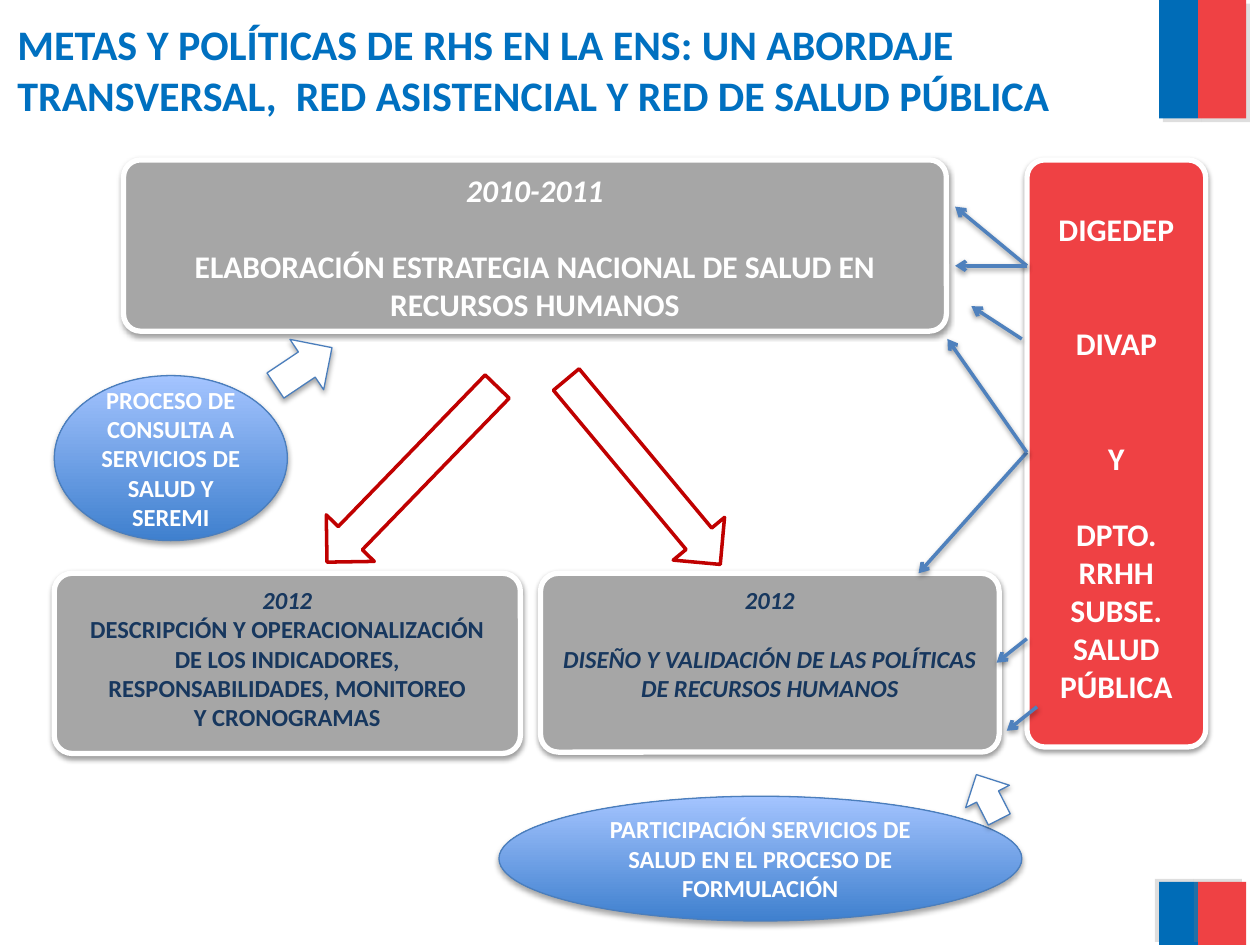
from dataclasses import dataclass

from lxml import etree
from pptx import Presentation
from pptx.dml.color import RGBColor
from pptx.enum.shapes import MSO_CONNECTOR, MSO_SHAPE
from pptx.enum.text import MSO_ANCHOR, PP_ALIGN
from pptx.oxml.ns import qn
from pptx.util import Pt

RECT = MSO_SHAPE.RECTANGLE
ROUND = MSO_SHAPE.ROUNDED_RECTANGLE
OVAL = MSO_SHAPE.OVAL
ARROW = MSO_SHAPE.RIGHT_ARROW
STRAIGHT = MSO_CONNECTOR.STRAIGHT
TOP, MIDDLE = MSO_ANCHOR.TOP, MSO_ANCHOR.MIDDLE
LEFT, CENTER = PP_ALIGN.LEFT, PP_ALIGN.CENTER


@dataclass(frozen=True)
class Theme:
    font: str = "Calibri"
    title: str = "0070C0"
    white: str = "FFFFFF"
    navy: str = "17375E"
    gray: str = "A6A6A6"
    blue: str = "006CB7"
    red: str = "EF4144"
    dark_red: str = "C00000"
    link: str = "4F81BD"
    edge: str = "4B7EBC"
    deep: str = "3F80CE"
    pale: str = "A4C4FF"
    head: int = 24
    large: int = 18
    small: int = 14
    # Shadows: colour, opacity %, blur, distance, angle
    card: tuple = ("000000", 38, 3.1, 1.6, 90)
    soft: tuple = ("000000", 35, 3.1, 1.8, 90)


T = Theme()
LINE = 1.22  # line height of the font, in ems


def rgb(color):
    return RGBColor.from_string(color)


def cast(shape, shade):
    """Give the shape its own shadow, or none."""
    props = shape.element.spPr
    effects = props.find(qn("a:effectLst"))
    if effects is None:
        effects = etree.SubElement(props, qn("a:effectLst"))
    if shade:
        color, alpha, blur, dist, angle = shade
        outer = etree.SubElement(
            effects, qn("a:outerShdw"), blurRad=str(Pt(blur)), dist=str(Pt(dist)),
            dir=str(angle * 60000), algn="ctr", rotWithShape="0")
        tint = etree.SubElement(outer, qn("a:srgbClr"), val=color)
        etree.SubElement(tint, qn("a:alpha"), val=str(alpha * 1000))


def add_form(slide, kind, box, fill, line=None, width=0, shade=None, turn=0):
    """Add a preset shape; a pair of colours as fill rises from bottom to top."""
    form = slide.shapes.add_shape(kind, *map(Pt, box))
    form.rotation = turn
    if isinstance(fill, tuple):
        form.fill.gradient()
        form.fill.gradient_angle = 90
        for stop, color in zip(form.fill.gradient_stops, fill):
            stop.color.rgb = rgb(color)
    else:
        form.fill.solid()
        form.fill.fore_color.rgb = rgb(fill)
    if line:
        form.line.color.rgb = rgb(line)
        form.line.width = Pt(width)
    else:
        form.line.fill.background()
    form.shadow.inherit = False
    cast(form, shade)
    return form


def put_text(form, parts, size=T.small, color=T.white, align=CENTER, anchor=TOP, lead=0):
    """Write parts of (text, italic, lines skipped above); lead skips lines at the top."""
    frame = form.text_frame
    frame.word_wrap = True
    frame.vertical_anchor = anchor
    step = size * LINE
    frame.margin_top = Pt(3.6 + lead * step)
    for i, (words, italic, skip) in enumerate(parts):
        para = frame.paragraphs[0] if i == 0 else frame.add_paragraph()
        para.alignment = align
        para.space_before = Pt(round(skip * step, 2))
        run = para.add_run()
        run.text = words
        font = run.font
        font.name, font.size, font.bold, font.italic = T.font, Pt(size), True, italic
        font.color.rgb = rgb(color)


def add_card(slide, box, parts, fill=T.gray, **style):
    card = add_form(slide, ROUND, box, fill, T.white, 3, T.card)
    card.adjustments[0] = 0.1
    put_text(card, parts, **style)


def add_oval(slide, box, words):
    oval = add_form(slide, OVAL, box, (T.deep, T.pale), T.edge, 0.75, T.soft)
    put_text(oval, [(words, False, 0)], anchor=MIDDLE)


def add_link(slide, start, end):
    link = slide.shapes.add_connector(STRAIGHT, *map(Pt, start + end))
    link.line.color.rgb = rgb(T.link)
    link.line.width = Pt(2)
    etree.SubElement(link.element.spPr.find(qn("a:ln")), qn("a:tailEnd"), type="arrow")
    cast(link, T.card)


def add_flag(slide, top, height, angle):
    for left, width, color in ((662.4, 22.3, T.blue), (684.7, 27.4, T.red)):
        add_form(slide, RECT, (left, top, width, height), color,
                 shade=("808080", 25, 0, 3, angle))


def add_title(slide, words):
    box = slide.shapes.add_textbox(*map(Pt, (2.9, 7.2, 686.2, 65.5)))
    put_text(box, [(words, False, 0)], size=T.head, color=T.title, align=LEFT)


def add_cards(slide):
    add_card(slide, (70.6, 91.4, 470.2, 97.9), [
        ("2010-2011", True, 0),
        ("ELABORACIÓN ESTRATEGIA NACIONAL DE SALUD EN RECURSOS HUMANOS", False, 1),
    ], size=T.large)
    add_card(slide, (31, 327.6, 266.4, 103), [
        ("2012", True, 0),
        ("DESCRIPCIÓN Y OPERACIONALIZACIÓN", False, 0),
        ("DE LOS INDICADORES, RESPONSABILIDADES, MONITOREO", False, 0),
        ("Y CRONOGRAMAS", False, 0),
    ], color=T.navy)
    add_card(slide, (308.9, 327.6, 262.1, 102.2), [
        ("2012", True, 0),
        ("DISEÑO Y VALIDACIÓN DE LAS POLÍTICAS DE RECURSOS HUMANOS", True, 1),
    ], color=T.navy)
    add_card(slide, (586.8, 91.4, 102.2, 335.5), [
        ("DIGEDEP", False, 0),
        ("DIVAP", False, 2),
        ("Y", False, 2),
        ("DPTO. RRHH", False, 1),
        ("SUBSE. SALUD PÚBLICA", False, 0),
    ], fill=T.red, size=T.large, lead=1)


def add_links(slide):
    upper, lower = (586.8, 151.9), (586.8, 258.5)
    for start, end in (
        (upper, (545.8, 118.1)),
        (upper, (545.8, 151.9)),
        ((583.9, 193.7), (555.1, 175)),
        (lower, (524.9, 327.6)),
        ((586.8, 365), (569.5, 378.7)),
        ((592.6, 403.9), (575.3, 417.6)),
        (lower, (541.4, 193.7)),
    ):
        add_link(slide, start, end)


def main():
    deck = Presentation()
    deck.slide_width, deck.slide_height = Pt(720), Pt(540)
    slide = deck.slides.add_slide(deck.slide_layouts[6])
    add_flag(slide, 0, 67.7, 45)
    add_flag(slide, 504, 36, 215)
    add_title(slide, "METAS Y POLÍTICAS DE RHS EN LA ENS: UN ABORDAJE "
                     "TRANSVERSAL,  RED ASISTENCIAL Y RED DE SALUD PÚBLICA")
    add_cards(slide)
    for box, turn in (((165.6, 252, 139.7, 38.2), 134.1),
                      ((298.8, 250.6, 137.5, 38.2), 50.2)):
        add_form(slide, ARROW, box, T.white, T.dark_red, 2, turn=turn)
    add_links(slide)
    add_oval(slide, (31, 214.6, 133.2, 94.3),
             "PROCESO DE CONSULTA A SERVICIOS DE SALUD Y SEREMI")
    add_oval(slide, (285.1, 455, 298.8, 71.3),
             "PARTICIPACIÓN SERVICIOS DE SALUD EN EL PROCESO DE FORMULACIÓN")
    for box, turn in (((154.1, 192.2, 38.9, 34.6), 326.2),
                      ((550.1, 441.4, 28.8, 28.1), 242.9)):
        add_form(slide, ARROW, box, T.white, T.edge, 0.75, T.soft, turn)
    deck.save("out.pptx")


if __name__ == "__main__":
    main()
